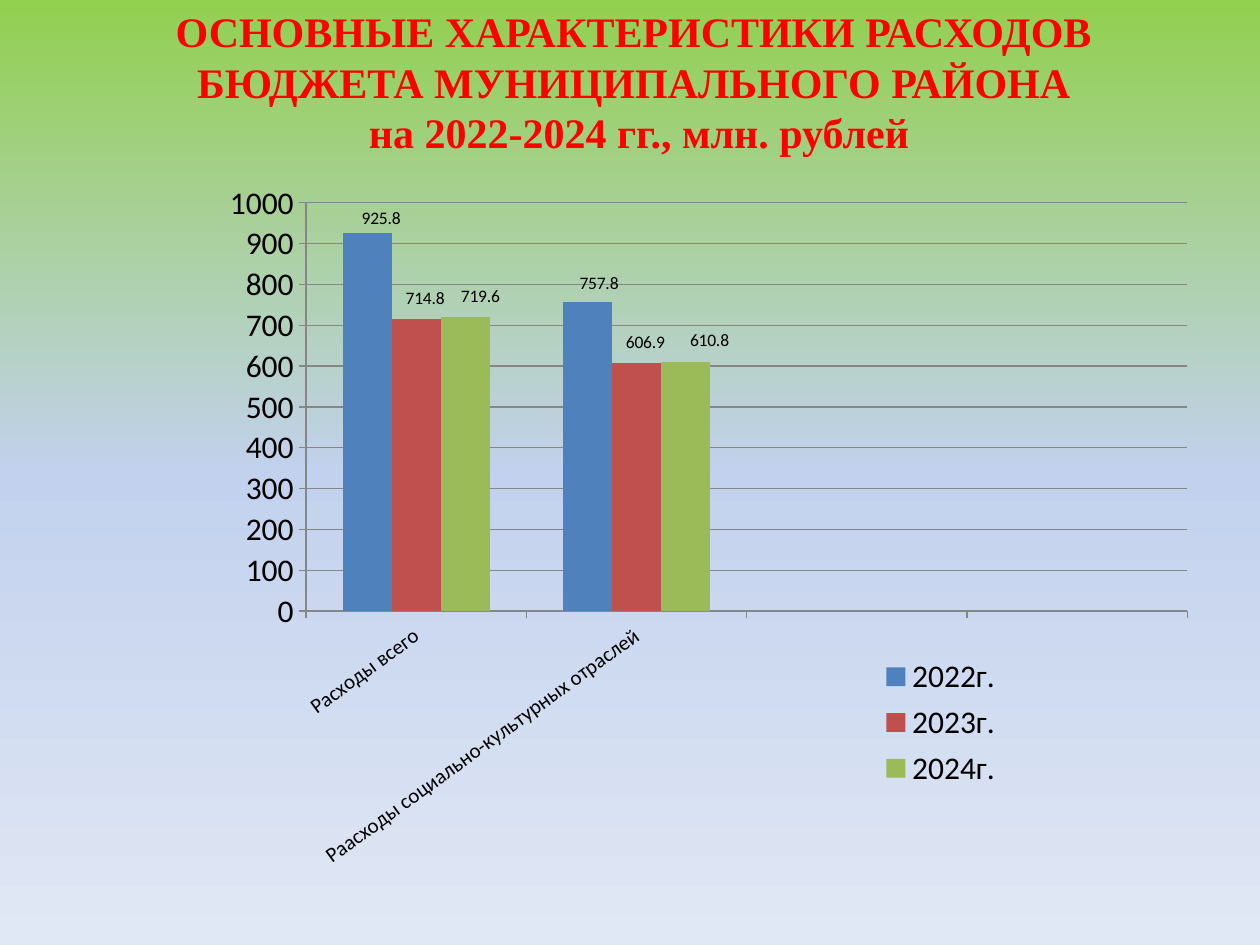
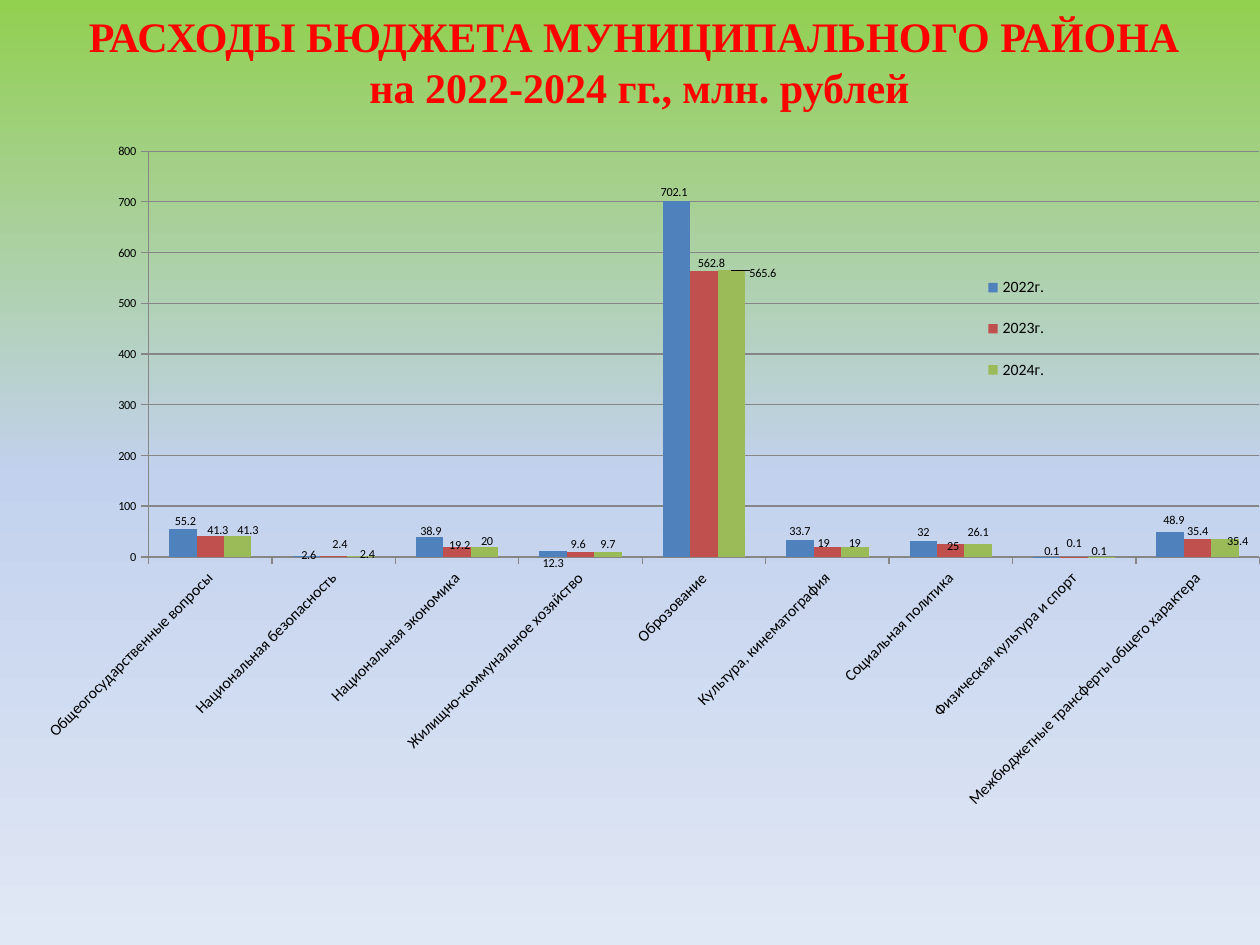
from copy import deepcopy
from dataclasses import dataclass

from lxml.etree import SubElement
from pptx import Presentation
from pptx.chart.data import CategoryChartData
from pptx.dml.color import RGBColor
from pptx.enum.chart import XL_CHART_TYPE, XL_LABEL_POSITION, XL_LEGEND_POSITION, XL_TICK_MARK
from pptx.enum.text import MSO_ANCHOR, PP_ALIGN
from pptx.oxml.ns import qn
from pptx.util import Inches, Pt


@dataclass(frozen=True)
class Theme:
    title_font: str = "Times New Roman"
    chart_font: str = "Calibri"
    title_size: float = 24
    title_color: str = "FF0000"
    text_color: str = "000000"
    grid_color: str = "868686"
    background: tuple = ((0, "92D050"), (0.5, "C2D1ED"), (1, "E1E8F5"))
    series_colors: tuple = ("4F81BD", "C0504D", "9BBB59")


THEME = Theme()
YEARS = ("2022г.", "2023г.", "2024г.")
LABEL_DROP = 0.03

SLIDES = [
    {
        "title": [
            "ОСНОВНЫЕ ХАРАКТЕРИСТИКИ РАСХОДОВ",
            "БЮДЖЕТА МУНИЦИПАЛЬНОГО РАЙОНА",
            " на 2022-2024 гг., млн. рублей",
        ],
        "title_box": (0.53, 0.29, 9, 0.71),
        "title_indent": -12,
        "chart_box": (1.6, 1.39, 7.83, 5.59),
        "plot": (0.83, 0.22, 7, 3.24),
        "legend": (5.36, 3.77, 1.02, 1.15),
        "maximum": 1000,
        "category_angle": -36,
        "sizes": {"axis": 18, "category": 12, "label": 10, "legend": 18},
        "categories": ["Расходы всего", "Раасходы социально-культурных отраслей", "", ""],
        "values": [
            (925.8, 757.8, None, None),
            (714.8, 606.9, None, None),
            (719.6, 610.8, None, None),
        ],
        "label_shifts": [
            [(0.11, -0.03), (0.09, -0.06)],
            [(0.07, -0.08), (0.07, -0.08)],
            [(0.12, -0.08), (0.19, -0.08)],
        ],
    },
    {
        "title": ["РАСХОДЫ БЮДЖЕТА МУНИЦИПАЛЬНОГО РАЙОНА ", "на 2022-2024 гг., млн. рублей"],
        "title_box": (0.43, 0.21, 9.29, 0.55),
        "title_indent": 0,
        "chart_box": (-1.03, 0.92, 11.03, 8.61),
        "plot": (2.21, 0.28, 8.82, 3.22),
        "legend": (8.77, 1.11, 0.66, 1.16),
        "maximum": 800,
        "category_angle": -45,
        "sizes": {"axis": 7, "category": 9, "label": 7, "legend": 9},
        "categories": [
            "Общеогосударственные вопросы",
            "Национальная безопасность",
            "Национальная экономика",
            "Жилищно-коммунальное хозяйство",
            "Оброзование",
            "Культура, кинематография",
            "Социальная политика",
            "Физическая культура и спорт",
            "Межбюджетные трансферты общего характера",
        ],
        "values": [
            (55.2, 2.6, 38.9, 12.3, 702.1, 33.7, 32, 0.1, 48.9),
            (41.3, 2.4, 19.2, 9.6, 562.8, 19, 25, 0.1, 35.4),
            (41.3, 2.4, 20, 9.7, 565.6, 19, 26.1, 0.1, 35.4),
        ],
        "label_shifts": [
            [(0.02, 0), (0.02, 0.06), (0.01, 0.02), (0, 0.16), (-0.02, 0),
             (0, 0), (0, 0), (0.04, 0.02), (0.03, -0.03)],
            [(0.06, 0.02), (0.05, -0.03), (0.02, 0.05), (-0.02, 0), (0.06, 0),
             (-0.03, 0.03), (0.02, 0.08), (0, -0.04), (0, 0)],
            [(0.08, 0.02), (0.05, 0.05), (0.02, 0.02), (0, 0), (0.25, 0.09),
             (0, 0.03), (0, -0.03), (-0.02, 0.02), (0.1, 0.08)],
        ],
    },
]


def rgb(color):
    return RGBColor.from_string(color)


def paint_background(master):
    fill = master.background.fill
    fill.gradient()
    fill.gradient_angle = 270
    stop_list = master._element.xpath(".//p:bg//a:gsLst")[0]
    stop_list.append(deepcopy(stop_list[-1]))
    for stop, (position, color) in zip(fill.gradient_stops, THEME.background):
        stop.position = position
        stop.color.rgb = rgb(color)


def add_text(page, lines, box, *, font, size, color, bold=False, first_indent=0):
    frame = page.shapes.add_textbox(*map(Inches, box)).text_frame
    frame.word_wrap = True
    frame.vertical_anchor = MSO_ANCHOR.MIDDLE
    for index, line in enumerate(lines):
        para = frame.paragraphs[0] if index == 0 else frame.add_paragraph()
        para.alignment = PP_ALIGN.CENTER
        span = para.add_run()
        span.text = line
        span.font.name = font
        span.font.size = Pt(size)
        span.font.bold = bold
        span.font.color.rgb = rgb(color)
    properties = frame.paragraphs[0]._p.get_or_add_pPr()
    properties.set("marL", "0")
    properties.set("indent", str(Pt(first_indent)))


def place(element, index, settings):
    for old in element.findall(qn("c:layout")):
        element.remove(old)
    layout = SubElement(element, qn("c:layout"))
    manual = SubElement(layout, qn("c:manualLayout"))
    for name, value in settings.items():
        SubElement(manual, qn(f"c:{name}")).set("val", str(value))
    element.insert(index, layout)


def share(lengths, chart_size):
    return [round(length / chart_size[side % 2], 4) for side, length in enumerate(lengths)]


def frame_settings(box, chart_size):
    modes = {"xMode": "edge", "yMode": "edge"}
    return modes | dict(zip("xywh", share(box, chart_size)))


def style_axes(chart, content):
    value_axis, category_axis = chart.value_axis, chart.category_axis
    value_axis.minimum_scale = 0
    value_axis.maximum_scale = content["maximum"]
    value_axis.major_unit = 100
    value_axis.has_major_gridlines = True
    lines = [value_axis.major_gridlines.format.line]
    for axis, size in ((value_axis, "axis"), (category_axis, "category")):
        axis.major_tick_mark = XL_TICK_MARK.OUTSIDE
        axis.tick_labels.font.size = Pt(content["sizes"][size])
        lines.append(axis.format.line)
    for line in lines:
        line.color.rgb = rgb(THEME.grid_color)
        line.width = Pt(0.75)
    body = category_axis._element.xpath("./c:txPr/a:bodyPr")[0]
    body.set("rot", str(content["category_angle"] * 60000))


def hide_leader_lines(series):
    labels = series._element.xpath("./c:dLbls")[0]
    for old in labels.findall(qn("c:showLeaderLines")):
        labels.remove(old)
    namespace = "http://schemas.microsoft.com/office/drawing/2012/chart"
    extension = SubElement(SubElement(labels, qn("c:extLst")), qn("c:ext"), nsmap={"c15": namespace})
    extension.set("uri", "{CE6537A1-D6FC-4f65-9D91-7224C49458BB}")
    SubElement(extension, f"{{{namespace}}}showLeaderLines").set("val", "0")


def style_series(chart, content):
    chart_size = content["chart_box"][2:]
    parts = zip(chart.plots[0].series, THEME.series_colors, content["label_shifts"])
    for series, color, shifts in parts:
        series.format.fill.solid()
        series.format.fill.fore_color.rgb = rgb(color)
        for index, (right, down) in enumerate(shifts):
            label = series.points[index].data_label
            label.font.size = Pt(content["sizes"]["label"])
            label.position = XL_LABEL_POSITION.OUTSIDE_END
            element = series._element.xpath(f"./c:dLbls/c:dLbl[c:idx/@val='{index}']")[0]
            place(element, 1, dict(zip("xy", share((right, down + LABEL_DROP), chart_size))))
        hide_leader_lines(series)


def add_budget_chart(page, content):
    data = CategoryChartData()
    data.categories = content["categories"]
    for year, values in zip(YEARS, content["values"]):
        data.add_series(year, values)
    box = map(Inches, content["chart_box"])
    chart = page.shapes.add_chart(XL_CHART_TYPE.COLUMN_CLUSTERED, *box, data).chart
    chart.has_title = False
    chart.font.name = THEME.chart_font
    chart.font.size = Pt(content["sizes"]["axis"])
    chart.font.color.rgb = rgb(THEME.text_color)
    plot = chart.plots[0]
    plot.gap_width = 150
    plot.vary_by_categories = False
    style_axes(chart, content)
    style_series(chart, content)
    chart.has_legend = True
    chart.legend.position = XL_LEGEND_POSITION.RIGHT
    chart.legend.include_in_layout = False
    chart.legend.font.size = Pt(content["sizes"]["legend"])
    chart_size = content["chart_box"][2:]
    place(chart.legend._element, 1, frame_settings(content["legend"], chart_size))
    plot_area = chart._chartSpace.xpath(".//c:plotArea")[0]
    plot_settings = frame_settings(content["plot"], chart_size)
    place(plot_area, 0, {"layoutTarget": "inner"} | plot_settings)


def main():
    deck = Presentation()
    deck.slide_width, deck.slide_height = Inches(10), Inches(7.5)
    paint_background(deck.slide_master)
    for content in SLIDES:
        page = deck.slides.add_slide(deck.slide_layouts[6])
        add_text(page, content["title"], content["title_box"], font=THEME.title_font,
                 size=THEME.title_size, color=THEME.title_color, bold=True,
                 first_indent=content["title_indent"])
        add_budget_chart(page, content)
    deck.save("out.pptx")


if __name__ == "__main__":
    main()
